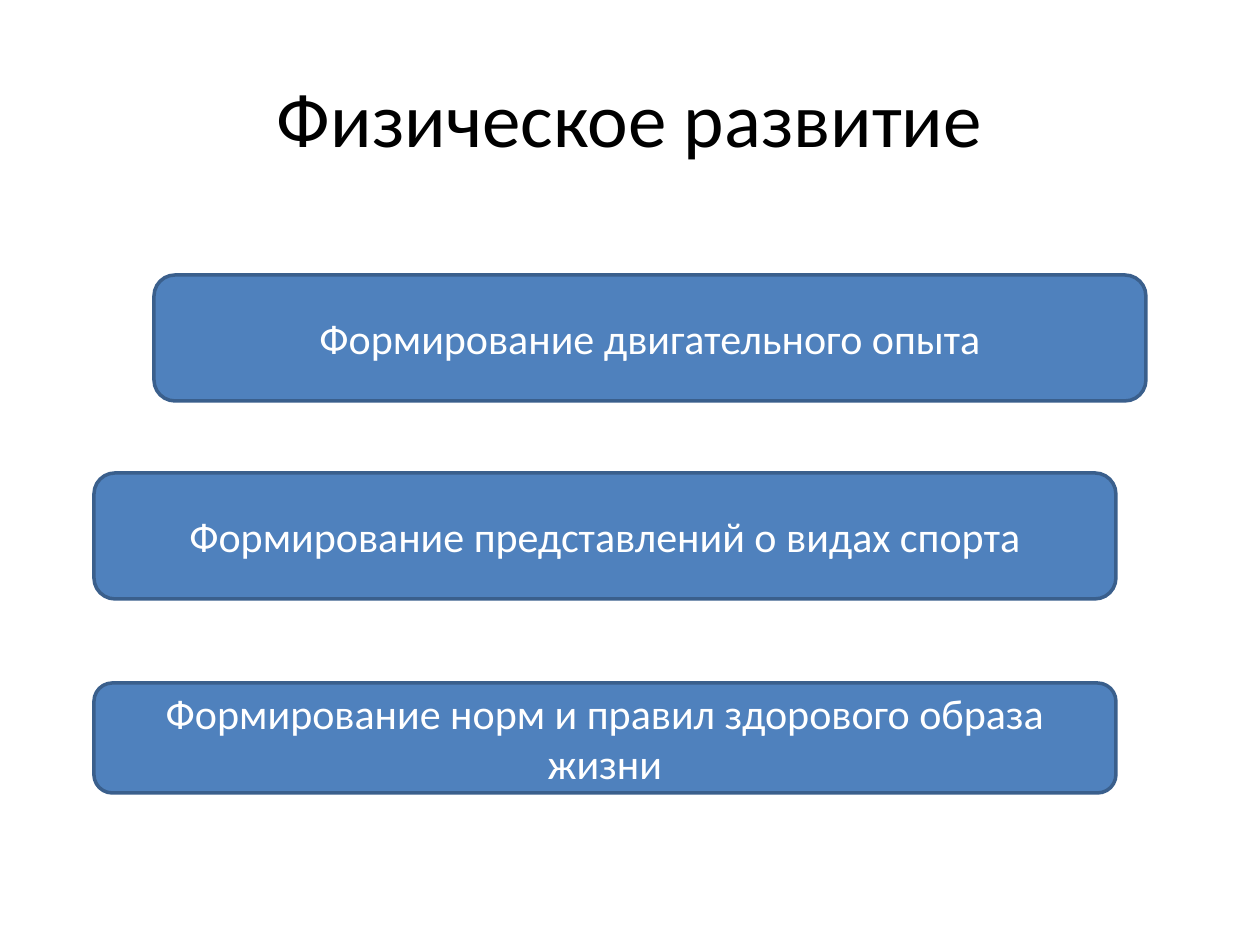
from pptx import Presentation
from pptx.dml.color import RGBColor
from pptx.enum.shapes import MSO_SHAPE
from pptx.enum.text import MSO_ANCHOR, PP_ALIGN
from pptx.util import Emu, Pt

PX = 914400 // 126
GOALS = [
    ((154, 275, 992, 126), "Формирование двигательного опыта"),
    ((94, 473, 1022, 126), "Формирование представлений о видах спорта"),
    ((94, 683, 1022, 110), "Формирование норм и правил здорового образа жизни"),
]


def px(n):
    """Turn px into EMU."""
    return Emu(n * PX)


def rgb(code):
    """Turn a hex string into a colour."""
    return RGBColor.from_string(code)


def write(sp, text, size=24, color="FFFFFF", font="Calibri"):
    """Write one centred paragraph in a shape."""
    tf = sp.text_frame
    tf.word_wrap = True
    tf.vertical_anchor = MSO_ANCHOR.MIDDLE
    p = tf.paragraphs[0]
    p.alignment = PP_ALIGN.CENTER
    r = p.add_run()
    r.text = text
    r.font.name = font
    r.font.size = Pt(size)
    r.font.color.rgb = rgb(color)


def add_title(s, box, text):
    """Place the slide title in its box."""
    sp = s.shapes.add_textbox(*map(px, box))
    write(sp, text, size=44, color="000000")


def add_goal(s, box, text):
    """Place one rounded goal bar in its box."""
    sp = s.shapes.add_shape(MSO_SHAPE.ROUNDED_RECTANGLE, *map(px, box))
    sp.shadow.inherit = False
    sp.fill.solid()
    sp.fill.fore_color.rgb = rgb("4F81BD")
    sp.line.color.rgb = rgb("3A5F8C")
    sp.line.width = Pt(2)
    write(sp, text)


def main():
    """Build and save the slide."""
    prs = Presentation()
    prs.slide_width, prs.slide_height = px(1260), px(945)
    s = prs.slides.add_slide(prs.slide_layouts[6])
    add_title(s, (63, 38, 1134, 157), "Физическое развитие")
    for box, text in GOALS:
        add_goal(s, box, text)
    prs.save("out.pptx")


if __name__ == "__main__":
    main()
